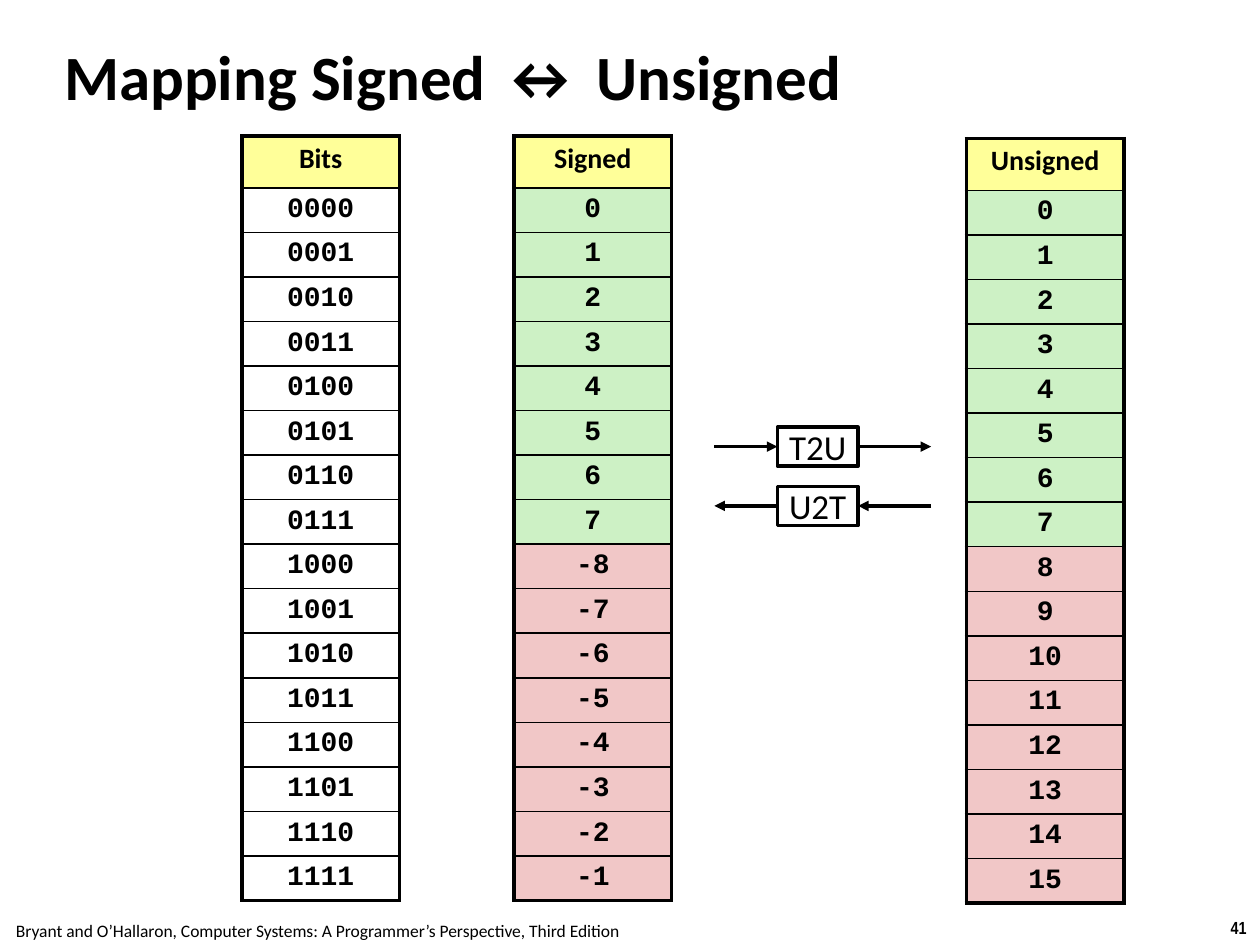
from lxml import etree
from pptx import Presentation
from pptx.dml.color import RGBColor
from pptx.enum.shapes import MSO_CONNECTOR, MSO_SHAPE
from pptx.enum.text import MSO_ANCHOR, PP_ALIGN
from pptx.oxml.ns import qn
from pptx.util import Inches, Pt

LEFT, CENTER = PP_ALIGN.LEFT, PP_ALIGN.CENTER
TOP, MIDDLE = MSO_ANCHOR.TOP, MSO_ANCHOR.MIDDLE
STRAIGHT, RECTANGLE = MSO_CONNECTOR.STRAIGHT, MSO_SHAPE.RECTANGLE
LEFT_SIDE, RIGHT_SIDE = 1, 3

PAGE_WIDTH, PAGE_HEIGHT = Inches(10), Inches(7.5)
COLORS = {
    "ink": "000000",
    "paper": "FFFFFF",
    "header": "FFFF99",
    "same": "CDF1C5",
    "differs": "F1C7C7",
}
FORMATS = {
    "title": {"name": "Calibri", "size": Pt(36), "bold": True},
    "footer": {"name": "Calibri", "size": Pt(10), "bold": False},
    "number": {"name": "Arial Narrow", "size": Pt(10), "bold": True},
    "header": {"name": "Calibri", "size": Pt(16), "bold": True},
    "value": {"name": "Courier New", "size": Pt(16), "bold": True},
    "function": {"name": "Calibri", "size": Pt(20), "bold": False},
}
BITS = 4
COUNT = 2 ** BITS
HALF = COUNT // 2
TABLE_WIDTH, TABLE_HEIGHT, HEADER_HEIGHT = 12.5, 80.93, 5.47
THICK, THIN = Pt(2.25), Pt(1)


def across(percent):
    return round(PAGE_WIDTH * percent / 100)


def down(percent):
    return round(PAGE_HEIGHT * percent / 100)


def area(left, top, width, height):
    """Turn percentages of the slide into a position and a size."""
    return across(left), down(top), across(width), down(height)


def color(name):
    return RGBColor.from_string(COLORS[name])


def write(frame, text, style, align=CENTER):
    para = frame.paragraphs[0]
    para.alignment = align
    span = para.add_run()
    span.text = text
    for name, value in FORMATS[style].items():
        setattr(span.font, name, value)
    span.font.color.rgb = color("ink")
    return para


def add_text(page, place, text, style, align=CENTER, wrap=False, margins=(0.1, 0.05)):
    frame = page.shapes.add_textbox(*area(*place)).text_frame
    frame.word_wrap = wrap
    frame.margin_left = frame.margin_right = Inches(margins[0])
    frame.margin_top = frame.margin_bottom = Inches(margins[1])
    write(frame, text, style, align)


def add_border(cell, side, width):
    properties = cell._tc.get_or_add_tcPr()
    border = etree.SubElement(properties, qn(f"a:ln{side}"), w=str(width))
    fill = etree.SubElement(border, qn("a:solidFill"))
    etree.SubElement(fill, qn("a:srgbClr"), val=COLORS["ink"])


def fill_cell(cell, text, style, fill, top, bottom):
    for side, width in {"L": THICK, "R": THICK, "T": top, "B": bottom}.items():
        add_border(cell, side, width)
    if fill:
        cell.fill.solid()
        cell.fill.fore_color.rgb = color(fill)
    else:
        cell.fill.background()
    for side in ("left", "right", "top", "bottom"):
        setattr(cell, f"margin_{side}", Inches(0.05))
    cell.vertical_anchor = TOP
    write(cell.text_frame, text, style).line_spacing = 0.95


def add_column(page, left, top, heading, values, fills):
    """Add a one-column table with a heading above its values."""
    place = area(left, top, TABLE_WIDTH, TABLE_HEIGHT)
    table = page.shapes.add_table(COUNT + 1, 1, *place).table
    table.first_row = table.horz_banding = False
    for row in table.rows:
        row.height = down((TABLE_HEIGHT - HEADER_HEIGHT) / COUNT)
    table.rows[0].height = down(HEADER_HEIGHT)
    fill_cell(table.cell(0, 0), heading, "header", "header", THICK, THIN)
    for index, (value, fill) in enumerate(zip(values, fills), start=1):
        bottom = THICK if index == COUNT else THIN
        fill_cell(table.cell(index, 0), str(value), "value", fill, THIN, bottom)


def add_function_box(page, top, text):
    box = page.shapes.add_shape(RECTANGLE, *area(61.7, top, 6.4, 4.13))
    box.shadow.inherit = False
    box.fill.solid()
    box.fill.fore_color.rgb = color("paper")
    box.line.color.rgb = color("ink")
    box.line.width = Pt(2)
    box.text_frame.word_wrap = False
    box.text_frame.vertical_anchor = MIDDLE
    write(box.text_frame, text, "function")
    return box


def add_arrow(page, box, side, outer, inward):
    """Join a side of the box to the outer position, pointing in or out."""
    middle = box.top + box.height // 2
    edge = box.left if side == LEFT_SIDE else box.left + box.width
    start, end = (across(outer), edge) if inward else (edge, across(outer))
    arrow = page.shapes.add_connector(STRAIGHT, start, middle, end, middle)
    join = arrow.end_connect if inward else arrow.begin_connect
    join(box, side)
    arrow.line.color.rgb = color("ink")
    arrow.line.width = Pt(2)
    etree.SubElement(arrow.line._get_or_add_ln(), qn("a:tailEnd"), type="triangle")
    etree.SubElement(arrow._element.spPr, qn("a:effectLst"))


def add_mapping(page, top, text, rightward):
    box = add_function_box(page, top, text)
    add_arrow(page, box, LEFT_SIDE, 56.7, inward=rightward)
    add_arrow(page, box, RIGHT_SIDE, 73.9, inward=not rightward)


def main():
    deck = Presentation()
    deck.slide_width, deck.slide_height = PAGE_WIDTH, PAGE_HEIGHT
    page = deck.slides.add_slide(deck.slide_layouts[6])

    add_text(page, (96.6, 96.4, 3.4, 3.6), "41", "number")
    add_text(page, (-0.2, 96.67, 50.8, 3.6),
             "Bryant and O’Hallaron, Computer Systems: "
             "A Programmer’s Perspective, Third Edition", "footer")
    add_text(page, (4.4, 3.6, 74.6, 8.13), "Mapping Signed ↔ Unsigned", "title",
             LEFT, wrap=True, margins=(0.07, 0.03))

    codes = range(COUNT)
    signed = [code if code < HALF else code - COUNT for code in codes]
    bits = [f"{code:0{BITS}b}" for code in codes]
    fills = ["same"] * HALF + ["differs"] * HALF
    add_column(page, 40.8, 14.4, "Signed", signed, fills)
    add_column(page, 76.7, 14.67, "Unsigned", codes, fills)
    add_column(page, 19.2, 14.4, "Bits", bits, [None] * COUNT)

    add_mapping(page, 51.47, "U2T", rightward=False)
    add_mapping(page, 45.2, "T2U", rightward=True)
    deck.save("out.pptx")


if __name__ == "__main__":
    main()
